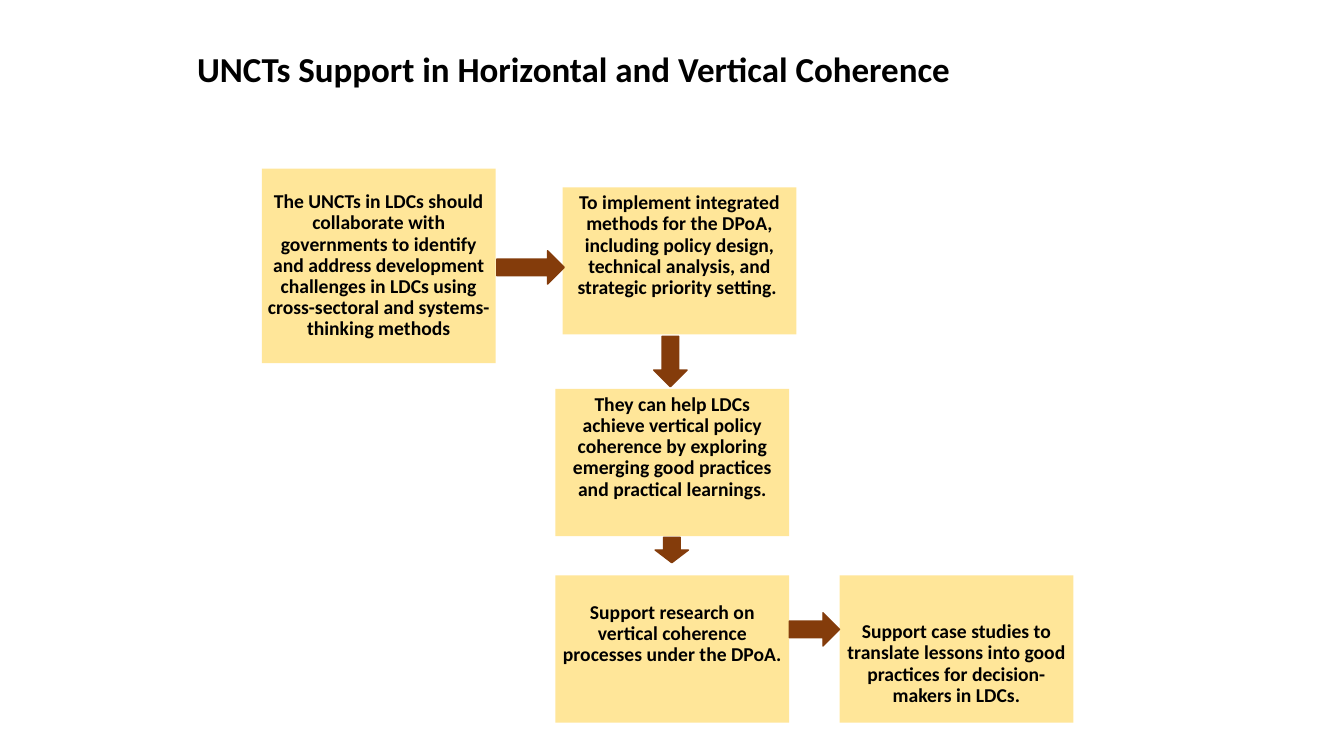
from pptx import Presentation
from pptx import util as u
from pptx.dml.color import RGBColor
from pptx.enum import shapes, text

BOX_W, BOX_H = 5.89, 3.71
ARROW_H = 0.84
PAD = 0.15
SHIFT = 0.76  # extra inset that moves a text off the middle of its box


def color(hex_code):
    return RGBColor.from_string(hex_code)


def write(tf, words, size=14, align=text.PP_ALIGN.CENTER, pads=(PAD,) * 4):
    """Fill a text frame; pads are left, top, right, bottom in cm."""
    tf.word_wrap = True
    tf.vertical_anchor = text.MSO_ANCHOR.MIDDLE
    tf.margin_left, tf.margin_top, tf.margin_right, tf.margin_bottom = map(u.Cm, pads)
    p = tf.paragraphs[0]
    p.alignment, p.line_spacing = align, 0.9
    r = p.add_run()
    r.text = words
    r.font.name, r.font.size, r.font.bold = "Calibri", u.Pt(size), True
    r.font.color.rgb = color("000000")


class FlowSlide:
    box_fill, arrow_fill = "FFE699", "843C0B"

    def __init__(self, prs):
        self.shapes = prs.slides.add_slide(prs.slide_layouts[6]).shapes

    def title(self, words, *area):
        sp = self.shapes.add_textbox(*map(u.Cm, area))
        write(sp.text_frame, words, size=25, align=text.PP_ALIGN.LEFT,
              pads=(0.25, 0.13, 0.25, 0.13))

    def shape(self, kind, fill, *area):
        sp = self.shapes.add_shape(kind, *map(u.Cm, area))
        sp.shadow.inherit = False
        sp.fill.solid()
        sp.fill.fore_color.rgb = color(fill)
        return sp

    def box(self, words, x, y, h=BOX_H, above=0, below=0):
        sp = self.shape(shapes.MSO_SHAPE.RECTANGLE, self.box_fill, x, y, BOX_W, h)
        sp.line.fill.background()
        write(sp.text_frame, words, pads=(PAD, PAD + above, PAD, PAD + below))

    def arrow(self, x, y, length, turn=0):
        sp = self.shape(shapes.MSO_SHAPE.RIGHT_ARROW, self.arrow_fill,
                        x, y, length, ARROW_H)
        sp.line.color.rgb = color(self.arrow_fill)
        sp.line.width = u.Pt(1)
        sp.rotation = turn


def main():
    prs = Presentation()
    prs.slide_width, prs.slide_height = u.Cm(33.87), u.Cm(19.05)
    s = FlowSlide(prs)

    # Title
    s.title("UNCTs Support in Horizontal and Vertical Coherence", 4.72, 0.91, 24.89, 1.75)

    # Steps
    s.box("The UNCTs in LDCs should collaborate with governments to identify and "
          "address development challenges in LDCs using cross-sectoral and "
          "systems-thinking methods", 6.6, 4.25, h=4.9)
    s.box("To implement integrated methods for the DPoA, including policy design, "
          "technical analysis, and strategic priority setting. ", 14.18, 4.72, below=SHIFT)
    s.box("They can help LDCs achieve vertical policy coherence by exploring "
          "emerging good practices and practical learnings.", 14, 9.8, below=SHIFT)
    s.box("Support case studies to translate lessons into good practices for "
          "decision-makers in LDCs.", 21.16, 14.5, above=SHIFT)
    s.box("Support research on vertical coherence processes under the DPoA. ",
          14, 14.5, below=SHIFT)

    # Arrows between the steps
    s.arrow(12.52, 6.32, 1.7)
    s.arrow(16.26, 8.69, 1.27, turn=90)
    s.arrow(16.61, 13.44, 0.64, turn=90)
    s.arrow(19.89, 15.44, 1.27)

    prs.save("out.pptx")


if __name__ == "__main__":
    main()
